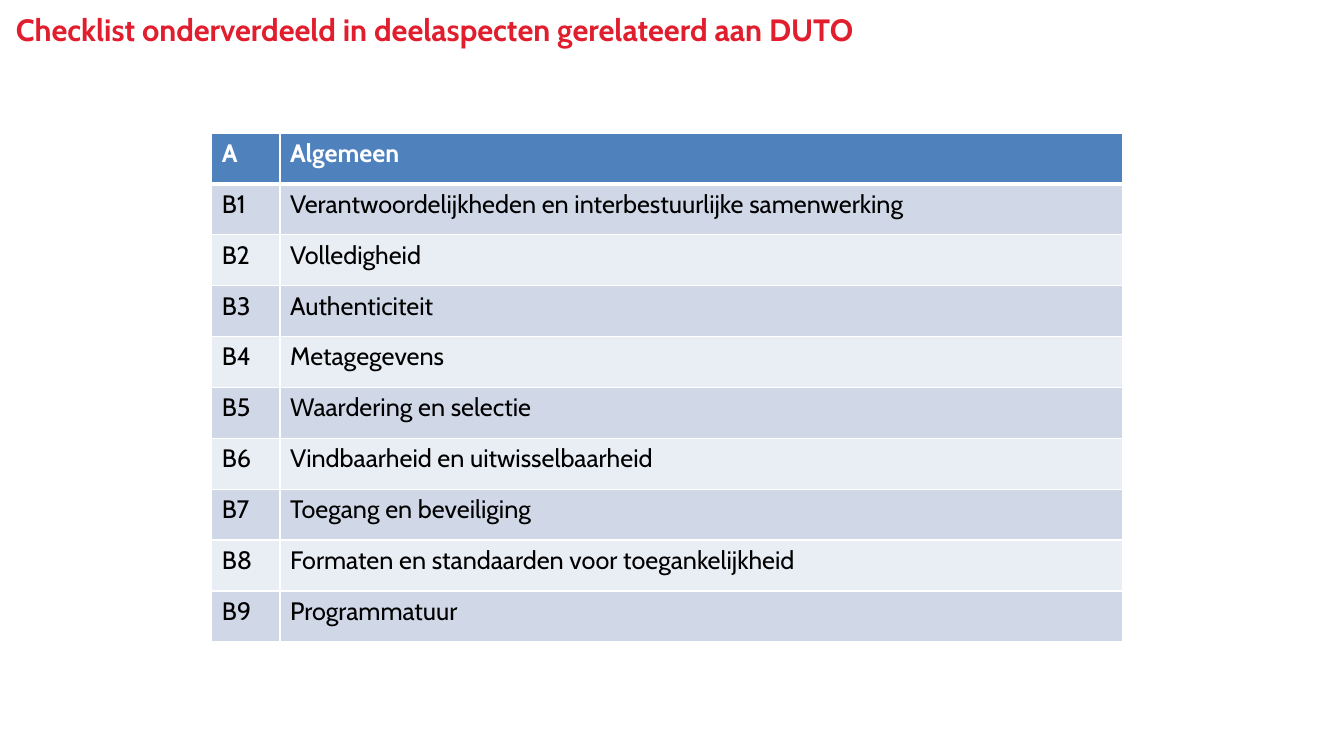
from lxml import etree
from pptx import Presentation
from pptx.dml.color import RGBColor
from pptx.enum.text import MSO_ANCHOR
from pptx.oxml.ns import qn
from pptx.util import Inches, Pt

MIDDLE = MSO_ANCHOR.MIDDLE
FONT = "Cabin"
RED, WHITE, BLACK = "E11E2D", "FFFFFF", "000000"
HEADER_FILL = "4F81BD"
BAND_FILLS = ("E9EDF4", "D0D8E8")
COLUMN_SHARES = (0.075, 0.925)

TITLE = "Checklist onderverdeeld in deelaspecten gerelateerd aan DUTO"
HEADER = ("A", "Algemeen")
ASPECTS = [
    "Verantwoordelijkheden en interbestuurlijke samenwerking",
    "Volledigheid",
    "Authenticiteit",
    "Metagegevens",
    "Waardering en selectie",
    "Vindbaarheid en uitwisselbaarheid",
    "Toegang en beveiliging",
    "Formaten en standaarden voor toegankelijkheid",
    "Programmatuur",
]


def rgb(value):
    """Turn a hex string into a colour."""
    return RGBColor.from_string(value)


def write(tf, text, color, **formats):
    """Fill a text frame with one formatted run."""
    r = tf.paragraphs[0].add_run()
    r.text = text
    r.font.color.rgb = rgb(color)
    for name, value in {"name": FONT, **formats}.items():
        setattr(r.font, name, value)


def add_borders(cell, widths):
    """Draw white borders with the given width in points per side."""
    tcPr = cell._tc.get_or_add_tcPr()
    for side, width in widths.items():
        line = etree.SubElement(tcPr, qn(f"a:ln{side}"), w=str(Pt(width)))
        fill = etree.SubElement(line, qn("a:solidFill"))
        etree.SubElement(fill, qn("a:srgbClr"), val=WHITE)


def add_title(s, left, top, width, height):
    """Place the slide title in the given box."""
    box = s.shapes.add_textbox(*map(Inches, (left, top, width, height)))
    tf = box.text_frame
    tf.word_wrap = True
    tf.vertical_anchor = MIDDLE
    write(tf, TITLE, RED, size=Pt(22), bold=True)


def add_checklist(s, left, top, width, height):
    """Place the checklist table in the given box."""
    rows = [HEADER] + [(f"B{i}", text) for i, text in enumerate(ASPECTS, 1)]
    frame = s.shapes.add_table(len(rows), len(HEADER),
                               *map(Inches, (left, top, width, height)))
    table = frame.table
    for column, share in zip(table.columns, COLUMN_SHARES):
        column.width = Inches(width * share)
    for i, row in enumerate(rows):
        header = i == 0
        widths = {"L": 1, "R": 1, "T": 3 if i == 1 else 1, "B": 3 if header else 1}
        for j, text in enumerate(row):
            cell = table.cell(i, j)
            add_borders(cell, widths)
            cell.fill.solid()
            cell.fill.fore_color.rgb = rgb(HEADER_FILL if header else BAND_FILLS[i % 2])
            write(cell.text_frame, text, WHITE if header else BLACK,
                  size=Pt(18), bold=header)


def main():
    """Build and save the slide."""
    prs = Presentation()
    prs.slide_width, prs.slide_height = Inches(13.33), Inches(7.5)
    s = prs.slides.add_slide(prs.slide_layouts[6])
    add_title(s, 0.06, 0.05, 10.47, 0.48)
    add_checklist(s, 2.1, 1.32, 9.03, 5.05)
    prs.save("out.pptx")


if __name__ == "__main__":
    main()
